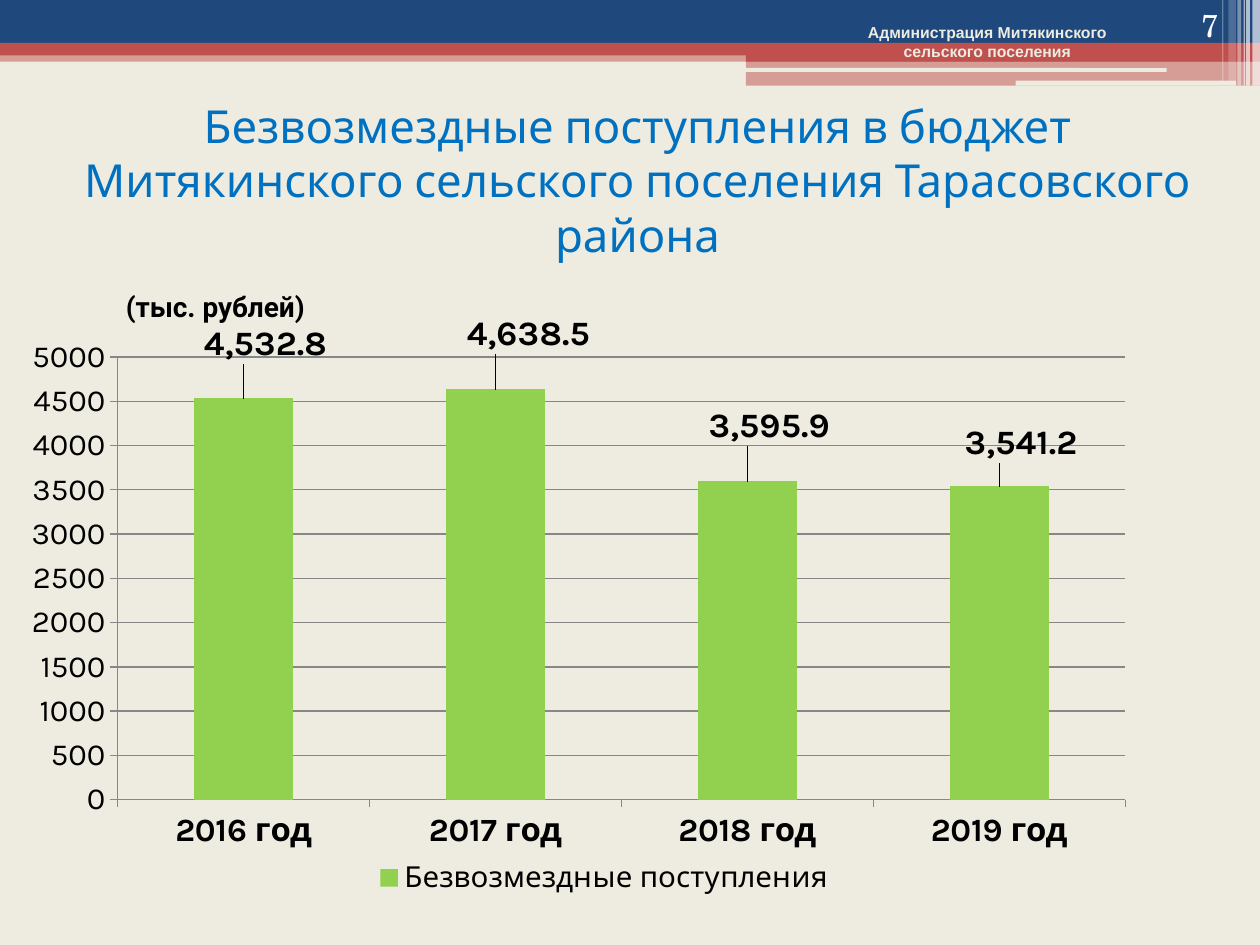
from lxml import etree
from pptx import Presentation
from pptx.chart.data import CategoryChartData
from pptx.dml.color import RGBColor
from pptx.enum import chart as ch, shapes, text
from pptx.oxml import ns
from pptx.util import Inches, Pt

CREAM = RGBColor(0xEE, 0xEC, 0xE1)
NAVY = RGBColor(0x1F, 0x49, 0x7D)
RED = RGBColor(0xC0, 0x50, 0x4D)
WHITE = RGBColor(0xFF, 0xFF, 0xFF)
BLACK = RGBColor(0, 0, 0)
BLUE = RGBColor(0x00, 0x70, 0xC0)
GREEN = RGBColor(0x92, 0xD0, 0x50)
GREY = RGBColor(0x87, 0x87, 0x87)

RECT = shapes.MSO_SHAPE.RECTANGLE
ROUND = shapes.MSO_SHAPE.ROUNDED_RECTANGLE
LEFT, CENTER, RIGHT = text.PP_ALIGN.LEFT, text.PP_ALIGN.CENTER, text.PP_ALIGN.RIGHT
TOP, MIDDLE, BOTTOM = (text.MSO_ANCHOR.TOP, text.MSO_ANCHOR.MIDDLE,
                       text.MSO_ANCHOR.BOTTOM)


def set_font(font, name, size, color=BLACK, bold=False):
    font.name, font.size, font.bold = name, Pt(size), bold
    font.color.rgb = color


def manual_layout(**values):
    """Return a c:layout element; values are fractions of the chart."""
    layout = etree.Element(ns.qn("c:layout"))
    manual = etree.SubElement(layout, ns.qn("c:manualLayout"))
    for tag, value in values.items():
        etree.SubElement(manual, ns.qn("c:" + tag)).set("val", str(value))
    return layout


class SlideBuilder:
    font = "Karla"

    def __init__(self, slide):
        self.slide = slide
        slide.background.fill.solid()
        slide.background.fill.fore_color.rgb = CREAM

    def bar(self, x, y, w, h, color, alpha=100, kind=RECT):
        sp = self.slide.shapes.add_shape(kind, *map(Inches, (x, y, w, h)))
        sp.shadow.inherit = False
        sp.fill.solid()
        sp.fill.fore_color.rgb = color
        sp.line.fill.background()
        if alpha < 100:
            clr = sp.fill._xPr.find(".//" + ns.qn("a:srgbClr"))
            etree.SubElement(clr, ns.qn("a:alpha")).set("val", str(alpha * 1000))

    def text(self, x, y, w, h, content, size, color, font=None, bold=False,
             align=LEFT, anchor=TOP):
        sp = self.slide.shapes.add_textbox(*map(Inches, (x, y, w, h)))
        tf = sp.text_frame
        tf.word_wrap = True
        tf.vertical_anchor = anchor
        tf.text = content
        for p in tf.paragraphs:
            p.alignment = align
            for r in p.runs:
                set_font(r.font, font or self.font, size, color, bold)

    def column_chart(self, x, y, w, h, name, cats, values, offsets):
        data = CategoryChartData()
        data.categories = cats
        data.add_series(name, values)
        frame = self.slide.shapes.add_chart(
            ch.XL_CHART_TYPE.COLUMN_CLUSTERED, *map(Inches, (x, y, w, h)), data)
        chart = frame.chart
        chart.has_title = False
        set_font(chart.font, "TeX Gyre Schola", 18)
        plot_area = chart._chartSpace.chart.plotArea
        for old in plot_area.findall(ns.qn("c:layout")):
            plot_area.remove(old)
        plot_area.insert(0, manual_layout(
            layoutTarget="inner", xMode="edge", yMode="edge",
            x=0.068, y=0.045, w=0.915, h=0.748))
        self.axes(chart)
        self.legend(chart)

        plot = chart.plots[0]
        plot.gap_width = 155
        plot.vary_by_categories = False
        series = plot.series[0]
        series.format.fill.solid()
        series.format.fill.fore_color.rgb = GREEN
        labels = series.data_labels
        labels.show_value = True
        labels.number_format = "#,##0.0"
        labels.number_format_is_linked = False
        set_font(labels.font, self.font, 20, bold=True)
        for i, (dx, dy) in enumerate(offsets):
            self.point_label(series.points[i].data_label, dx, dy)

    def axes(self, chart):
        cat, val = chart.category_axis, chart.value_axis
        set_font(cat.tick_labels.font, self.font, 19, bold=True)
        set_font(val.tick_labels.font, self.font, 18)
        val.minimum_scale, val.maximum_scale, val.major_unit = 0, 5000, 500
        val.has_major_gridlines = True
        for axis in (cat, val):
            axis.major_tick_mark = ch.XL_TICK_MARK.OUTSIDE
        for part in (cat, val, val.major_gridlines):
            part.format.line.color.rgb = GREY
            part.format.line.width = Pt(0.75)

    def legend(self, chart):
        chart.has_legend = True
        legend = chart.legend
        legend.position = ch.XL_LEGEND_POSITION.RIGHT
        legend.include_in_layout = False
        set_font(legend.font, self.font, 17)
        legend._element.find(ns.qn("c:legendPos")).addnext(manual_layout(
            xMode="edge", yMode="edge", x=0.29, y=0.87, w=0.44, h=0.11))

    def point_label(self, label, dx, dy):
        """Shift one label from its place above the column."""
        set_font(label.font, self.font, 20, bold=True)
        label.position = ch.XL_LABEL_POSITION.OUTSIDE_END
        layout = manual_layout(x=dx, y=dy)
        label._dLbl.find(ns.qn("c:idx")).addnext(layout)
        fmt = etree.Element(ns.qn("c:numFmt"), formatCode="#,##0.0",
                            sourceLinked="0")
        layout.addnext(fmt)


def main():
    prs = Presentation()
    prs.slide_width, prs.slide_height = Inches(10), Inches(7.5)
    s = SlideBuilder(prs.slides.add_slide(prs.slide_layouts[6]))

    # Header bands
    s.bar(0, 0.4, 10, 0.09, RED, 50)
    s.bar(0, 0, 10, 0.34, NAVY)
    s.bar(0, 0.34, 10, 0.1, RED)
    s.bar(5.92, 0.39, 4.08, 0.1, RED)
    s.bar(5.92, 0.48, 4.08, 0.2, RED, 50)
    s.bar(5.91, 0.54, 3.35, 0.03, CREAM, kind=ROUND)
    s.bar(8.06, 0.64, 1.75, 0.04, CREAM, kind=ROUND)

    # Vertical stripes in the corner: left, width, height, opacity
    for x, w, h, alpha in [(9.94, 0.06, 0.68, 65), (9.89, 0.03, 0.68, 65),
                           (9.87, 0.01, 0.68, 60), (9.82, 0.03, 0.68, 40),
                           (9.75, 0.06, 0.64, 20), (9.7, 0.01, 0.64, 30)]:
        s.bar(x, 0, w, h, WHITE, alpha)

    s.text(0.12, 0.84, 9.88, 1.17,
           "Безвозмездные поступления в бюджет\v"
           "Митякинского сельского поселения Тарасовского района",
           26, BLUE, align=CENTER, anchor=MIDDLE)
    s.text(0.9, 2.25, 1.81, 0.37, "(тыс. рублей)", 16, BLACK, "Roboto", True)
    s.text(6.28, 0.13, 3.11, 0.4,
           "Администрация Митякинского\nсельского поселения",
           9, CREAM, "Arial", True, CENTER)
    s.column_chart(0.25, 2.49, 8.83, 4.83, "Безвозмездные поступления",
                   [f"{year} год" for year in range(2016, 2020)],
                   [4532.8, 4638.5, 3595.9, 3541.2],
                   [(0.02, -0.05), (0.03, -0.05), (0.02, -0.05), (0.02, -0.03)])
    s.text(8.94, 0, 0.83, 0.4, "7", 18, WHITE, "TeX Gyre Schola",
           align=RIGHT, anchor=BOTTOM)
    prs.save("out.pptx")


if __name__ == "__main__":
    main()
